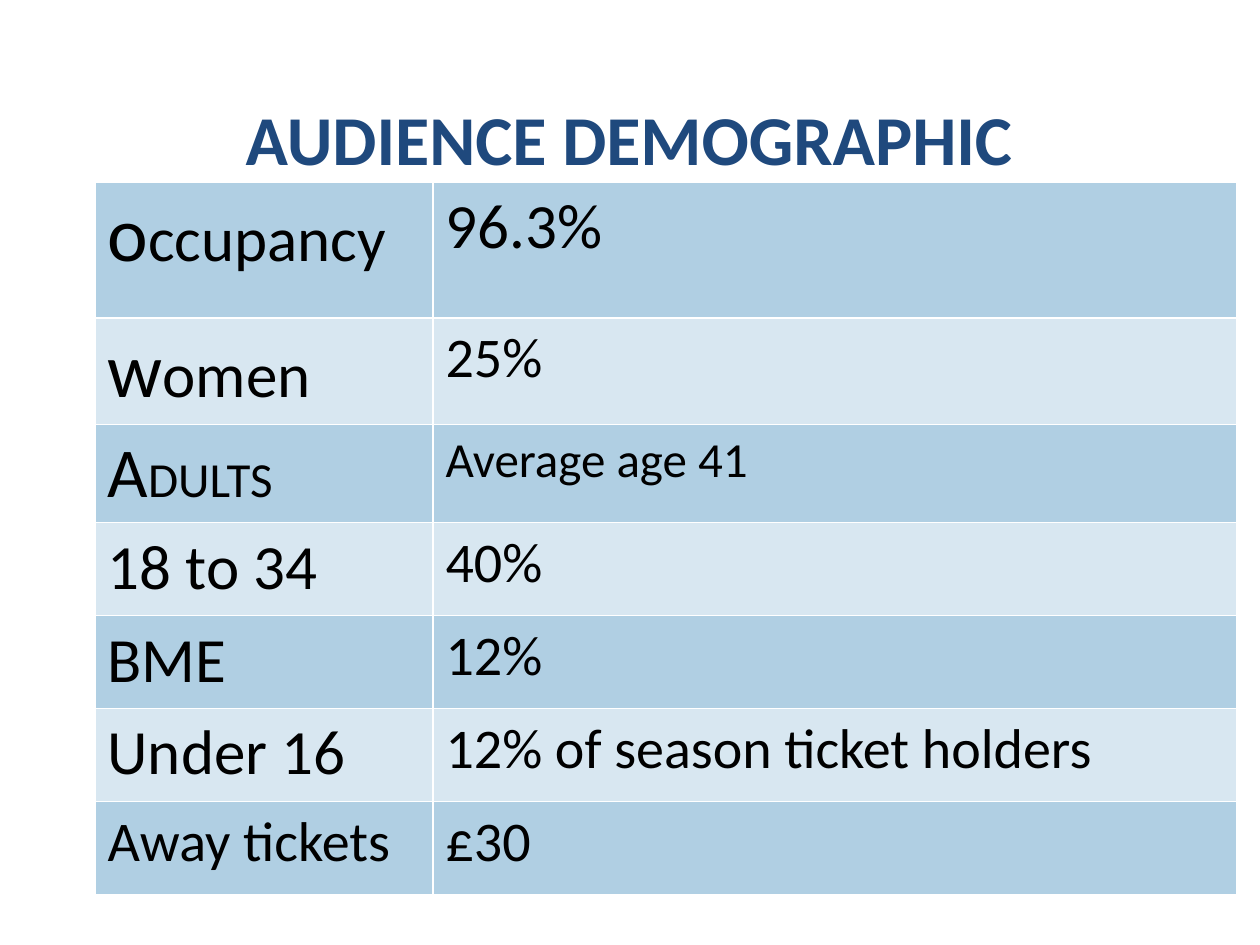
"""Build the audience demographic slide: a title above a two-column table."""
from lxml.etree import SubElement
from pptx import Presentation
from pptx.dml.color import RGBColor
from pptx.enum.text import MSO_ANCHOR as Anchor, MSO_AUTO_SIZE as AutoSize, PP_ALIGN as Align
from pptx.oxml.ns import qn
from pptx.util import Emu, Pt

TITLE = "AUDIENCE DEMOGRAPHIC"
ROWS = [
    (136, [("o", 44), ("ccupancy", 36)], [("96.3%", 36)]),
    (106, [("w", 44), ("omen", 36)], [("25%", 32)]),
    (98, [("A", 40), ("DULTS", 28)], [("Average age 41", 28)]),
    (93, [("18 to 34", 36)], [("40%", 32)]),
    (93, [("BME", 36)], [("12%", 32)]),
    (93, [("Under 16", 36)], [("12% of season ticket holders", 32)]),
    (93, [("Away tickets", 32)], [("£30", 32)]),
]
COLUMN_WIDTHS = (338, 804)
TABLE_LEFT, TABLE_TOP = 95, 182
TITLE_BOX = {"left": 44, "top": 96, "width": 1170, "height": 81}
BANDS = ("B0CFE3", "D8E7F1")
TITLE_COLOR, TEXT_COLOR, BORDER_COLOR = "1F497D", "000000", "FFFFFF"
FONT = "Calibri"


def px(value):
    return Emu(round(value * 914400 / 126))


def rgb(value):
    return RGBColor.from_string(value)


def add_run(paragraph, text, size, color, bold=False):
    run = paragraph.add_run()
    run.text = text
    for name, value in {"name": FONT, "size": Pt(size), "bold": bold}.items():
        setattr(run.font, name, value)
    run.font.color.rgb = rgb(color)


def add_borders(cell):
    properties = cell._tc.get_or_add_tcPr()
    for index, side in enumerate(("lnL", "lnR", "lnT", "lnB")):
        line = properties.makeelement(qn(f"a:{side}"), {"w": str(Pt(1))})
        fill = SubElement(line, qn("a:solidFill"))
        SubElement(fill, qn("a:srgbClr"), val=BORDER_COLOR)
        properties.insert(index, line)


def add_title(slide):
    title = slide.shapes.title
    for name, value in TITLE_BOX.items():
        setattr(title, name, px(value))
    frame = title.text_frame
    settings = {"margin_left": 0, "margin_right": 0, "margin_top": 0, "margin_bottom": 0,
                "vertical_anchor": Anchor.TOP, "auto_size": AutoSize.NONE, "word_wrap": True}
    for name, value in settings.items():
        setattr(frame, name, value)
    paragraph = frame.paragraphs[0]
    paragraph.alignment = Align.CENTER
    add_run(paragraph, TITLE, 40, TITLE_COLOR, True)


def add_demographics(slide):
    total_height = sum(height for height, *_ in ROWS)
    table = slide.shapes.add_table(len(ROWS), len(COLUMN_WIDTHS), px(TABLE_LEFT), px(TABLE_TOP),
                                   px(sum(COLUMN_WIDTHS)), px(total_height)).table
    table.first_row = False
    for column, width in zip(table.columns, COLUMN_WIDTHS):
        column.width = px(width)
    for index, (row, (height, *contents)) in enumerate(zip(table.rows, ROWS)):
        row.height = px(height)
        for cell, runs in zip(row.cells, contents):
            cell.fill.solid()
            cell.fill.fore_color.rgb = rgb(BANDS[index % 2])
            add_borders(cell)
            for text, size in runs:
                add_run(cell.text_frame.paragraphs[0], text, size, TEXT_COLOR)


def main():
    presentation = Presentation()
    presentation.slide_width, presentation.slide_height = px(1260), px(945)
    slide = presentation.slides.add_slide(presentation.slide_layouts[5])
    add_demographics(slide)
    add_title(slide)
    presentation.save("out.pptx")


if __name__ == "__main__":
    main()
